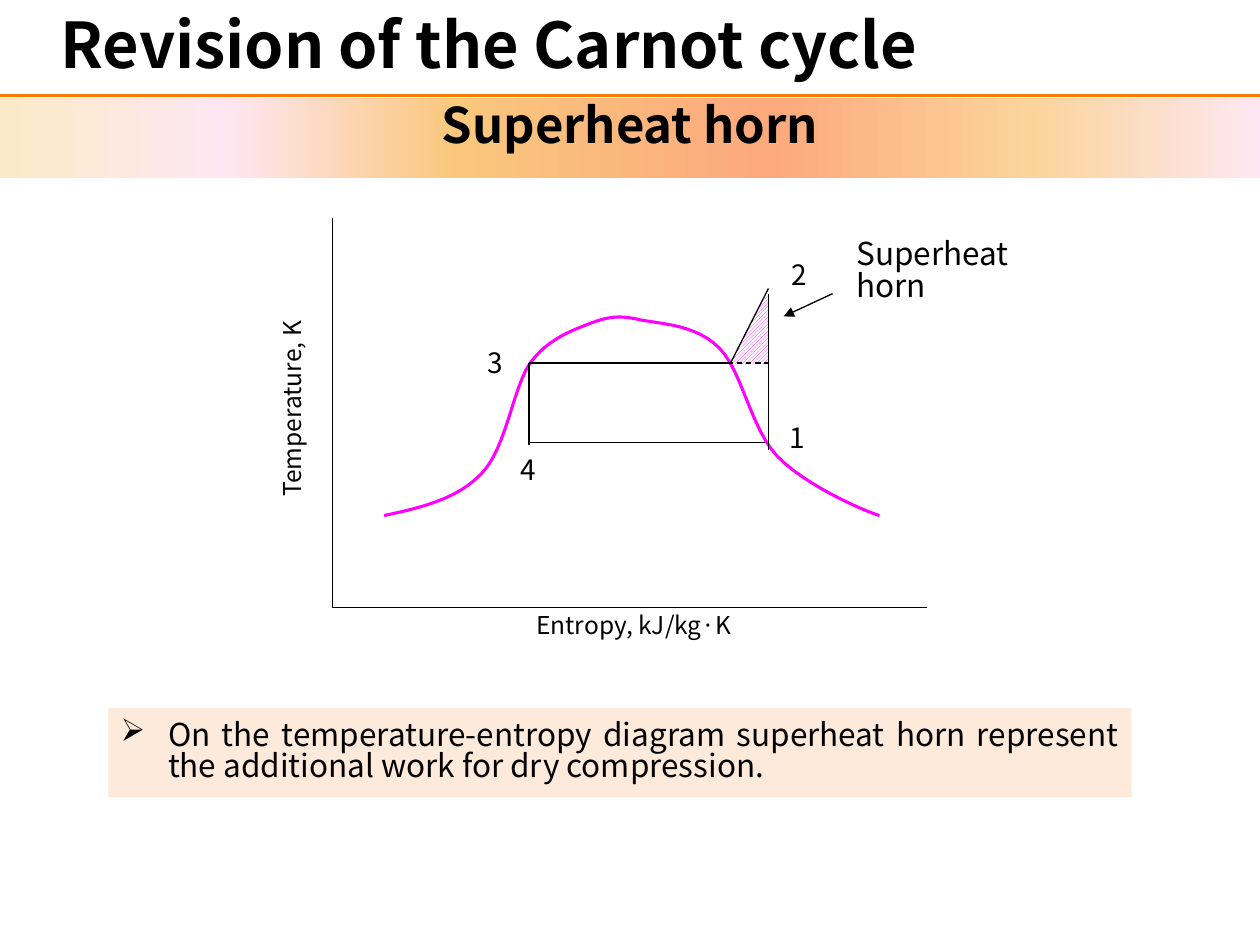
from pptx import Presentation
from pptx.dml.color import RGBColor
from pptx.enum import dml, shapes, text
from pptx.oxml.ns import qn
from pptx.util import Pt
from lxml import etree

FONT = "Noto Sans CJK KR"
BLACK = RGBColor(0, 0, 0)
WHITE = RGBColor(255, 255, 255)
ORANGE = RGBColor(0xFF, 0x7A, 0x00)
MAGENTA = RGBColor(0xFF, 0x00, 0xFF)
PEACH = RGBColor(0xFD, 0xEA, 0xDA)
BAND_STOPS = [
    (0, RGBColor(0xFB, 0xEA, 0xC7)), (18, RGBColor(0xFE, 0xE7, 0xF2)),
    (36, RGBColor(0xFA, 0xC7, 0x7D)), (61, RGBColor(0xFB, 0xA9, 0x7D)),
    (82, RGBColor(0xFB, 0xD4, 0x9C)), (100, RGBColor(0xFE, 0xE7, 0xF2)),
]
LINE_SPACING = 0.83
CURVE_START = (29.5, 170)
CURVE = [
    ((50.4, 165.6), (71.3, 160.6), (85, 146.2)),
    ((99.4, 131.8), (103, 97.2), (113, 82.8)),
    ((123.8, 68.4), (137.5, 64.1), (148.3, 59.8)),
    ((158.4, 56.2), (164.2, 55.4), (176.4, 58.3)),
    ((188.6, 60.5), (208.1, 61.2), (221, 74.2)),
    ((234, 87.1), (239, 120.2), (254.2, 136.1)),
    ((269.3, 151.9), (301, 166.3), (312.5, 170)),
]


def place(sp, x, y, w, h):
    sp.left, sp.top, sp.width, sp.height = Pt(x), Pt(y), Pt(w), Pt(h)


def write(sp, words, size, bold=False, align=text.PP_ALIGN.LEFT,
          anchor=text.MSO_ANCHOR.TOP, bullet=None, indent=0):
    tf = sp.text_frame
    tf.word_wrap = True
    tf.auto_size = text.MSO_AUTO_SIZE.NONE
    tf.vertical_anchor = anchor
    p = tf.paragraphs[0]
    p.alignment = align
    p.space_before = Pt(0)
    p.line_spacing = LINE_SPACING
    pPr = p._p.get_or_add_pPr()
    pPr.set("marL", str(Pt(indent)))
    pPr.set("indent", str(Pt(-indent)))
    if bullet:
        etree.SubElement(pPr, qn("a:buChar")).set("char", bullet)
    else:
        etree.SubElement(pPr, qn("a:buNone"))
    r = p.add_run()
    r.text = words
    r.font.name = FONT
    r.font.size = Pt(size)
    r.font.bold = bold
    r.font.color.rgb = BLACK


def add_line(parent, x1, y1, x2, y2, color=BLACK, width=0.75, dash=None, arrow=False):
    cn = parent.add_connector(shapes.MSO_CONNECTOR.STRAIGHT, Pt(x1), Pt(y1), Pt(x2), Pt(y2))
    cn.line.color.rgb = color
    cn.line.width = Pt(width)
    if dash:
        cn.line.dash_style = dash
    if arrow:
        etree.SubElement(cn.line._get_or_add_ln(), qn("a:tailEnd")).set("type", "triangle")
    etree.SubElement(cn._element.spPr, qn("a:effectLst"))


def add_title(s, x, y, w, h):
    sp = s.shapes.title
    place(sp, x, y, w, h)
    write(sp, "Revision of the Carnot cycle", 36, True,
          text.PP_ALIGN.CENTER, text.MSO_ANCHOR.MIDDLE)


def add_band(s, x, y, w, h):
    sp = s.placeholders[1]
    place(sp, x, y, w, h)
    sp.fill.gradient()
    sp.fill.gradient_angle = 0
    stops = sp._element.spPr.find(".//" + qn("a:gsLst"))
    for gs in list(stops):
        stops.remove(gs)
    for pos, color in BAND_STOPS:
        gs = etree.SubElement(stops, qn("a:gs"))
        gs.set("pos", str(pos * 1000))
        etree.SubElement(gs, qn("a:srgbClr")).set("val", str(color))
    write(sp, "Superheat horn", 28, True, text.PP_ALIGN.CENTER)
    add_line(s.shapes, x, y - 1.5, x + w, y - 1.5, ORANGE, 2)


def bezier(p0, p1, p2, p3, steps=12):
    for i in range(1, steps + 1):
        t = i / steps
        yield tuple((1 - t) ** 3 * a + 3 * t * (1 - t) ** 2 * b + 3 * t * t * (1 - t) * c + t ** 3 * d
                    for a, b, c, d in zip(p0, p1, p2, p3))


def add_saturation_curve(grp, x, y):
    points, last = [], CURVE_START
    for c1, c2, end in CURVE:
        points += bezier(last, c1, c2, end)
        last = end
    fb = grp.build_freeform(Pt(x + CURVE_START[0]), Pt(y + CURVE_START[1]))
    fb.add_line_segments([(Pt(x + px), Pt(y + py)) for px, py in points], close=False)
    sp = fb.convert_to_shape()
    sp.shadow.inherit = False
    sp.fill.background()
    sp.line.color.rgb = MAGENTA
    sp.line.width = Pt(1.75)


def add_horn(grp, x, y, w, h):
    sp = grp.add_shape(shapes.MSO_SHAPE.RIGHT_TRIANGLE, Pt(x), Pt(y), Pt(w), Pt(h))
    sp.rotation = 270
    sp.shadow.inherit = False
    sp.fill.patterned()
    sp.fill.pattern = dml.MSO_PATTERN.LIGHT_UPWARD_DIAGONAL
    sp.fill.fore_color.rgb = MAGENTA
    sp.fill.back_color.rgb = WHITE
    sp.line.fill.background()


def add_diagram(s, x, y, w, h):
    grp = s.shapes.add_group_shape().shapes
    add_saturation_curve(grp, x, y)
    add_horn(grp, x + 217.4, y + 51.8, 41, 22.3)

    left, right, upper, lower, vapour = 112.3, 249.1, 82.8, 128.2, 227.5
    for x1, y1, x2, y2 in [
        (0, 0, 0, h), (0, h, w, h),
        (left, upper, left, lower + 1.4), (left, lower, right - 2, lower),
        (left, upper, vapour, upper), (vapour, upper, right, 40.3),
        (right, 132.5, right, 43.2),
    ]:
        add_line(grp, x + x1, y + y1, x + x2, y + y2)
    add_line(grp, x + 221, y + upper, x + right, y + upper, dash=dml.MSO_LINE.DASH)
    add_line(grp, x + 285.8, y + 43.2, x + 257.8, y + 56.2, arrow=True)

    for words, size, dx, dy, bw, bh in [
        ("1", 16, 254.2, 115.2, 24, 26.6), ("2", 16, 255, 22.3, 24, 26.6),
        ("3", 16, 81.4, 72.7, 24, 26.6), ("4", 16, 100.1, 133.9, 24, 26.6),
        ("Entropy, kJ/kg·K", 14, 109.4, h + 0.7, 146.2, 24.5),
        ("Superheat horn", 18, 292.3, 9.4, 116.6, 50.4),
        ("Temperature, K", 14, -32.4, 36, 31, 130.3),
    ]:
        sp = grp.add_textbox(Pt(x + dx), Pt(y + dy), Pt(bw), Pt(bh))
        write(sp, words, size)
        if bh > bw:
            if len(words) > 1:
                sp.text_frame._txBody.bodyPr.set("vert", "vert270")


def add_note(s, x, y, w, h):
    sp = s.shapes.add_textbox(Pt(x), Pt(y), Pt(w), Pt(h))
    sp.fill.solid()
    sp.fill.fore_color.rgb = PEACH
    write(sp, "On the temperature-entropy diagram superheat horn represent "
          "the additional work for dry compression.", 18,
          align=text.PP_ALIGN.JUSTIFY, anchor=text.MSO_ANCHOR.MIDDLE,
          bullet="➢", indent=27)


def main():
    prs = Presentation()
    prs.slide_width, prs.slide_height = Pt(720), Pt(540)
    s = prs.slides.add_slide(prs.slide_layouts[1])
    add_title(s, 0, 0, 558.7, 56.9)
    add_band(s, 0, 56.2, 720, 45.4)
    add_diagram(s, 190, 124.6, 340, 222.5)
    add_note(s, 61.9, 404.6, 584.6, 51.1)
    prs.save("out.pptx")


if __name__ == "__main__":
    main()
